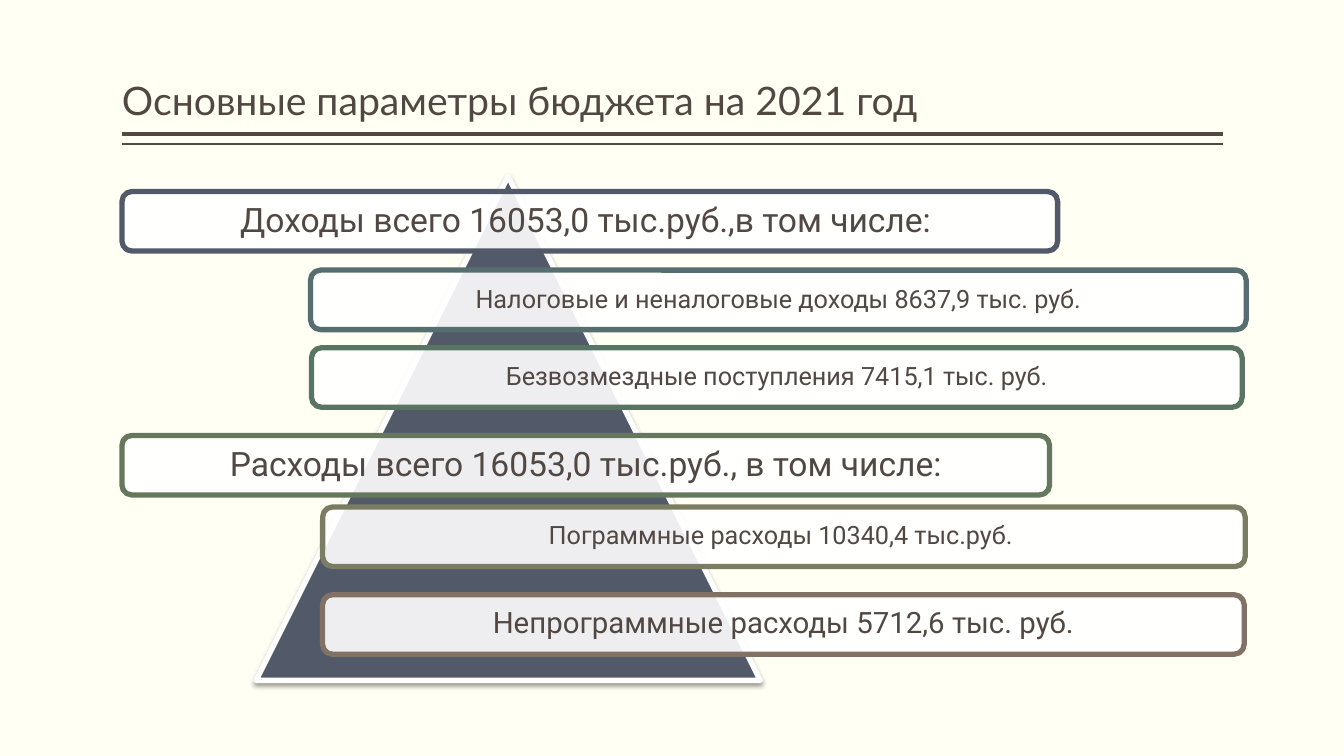
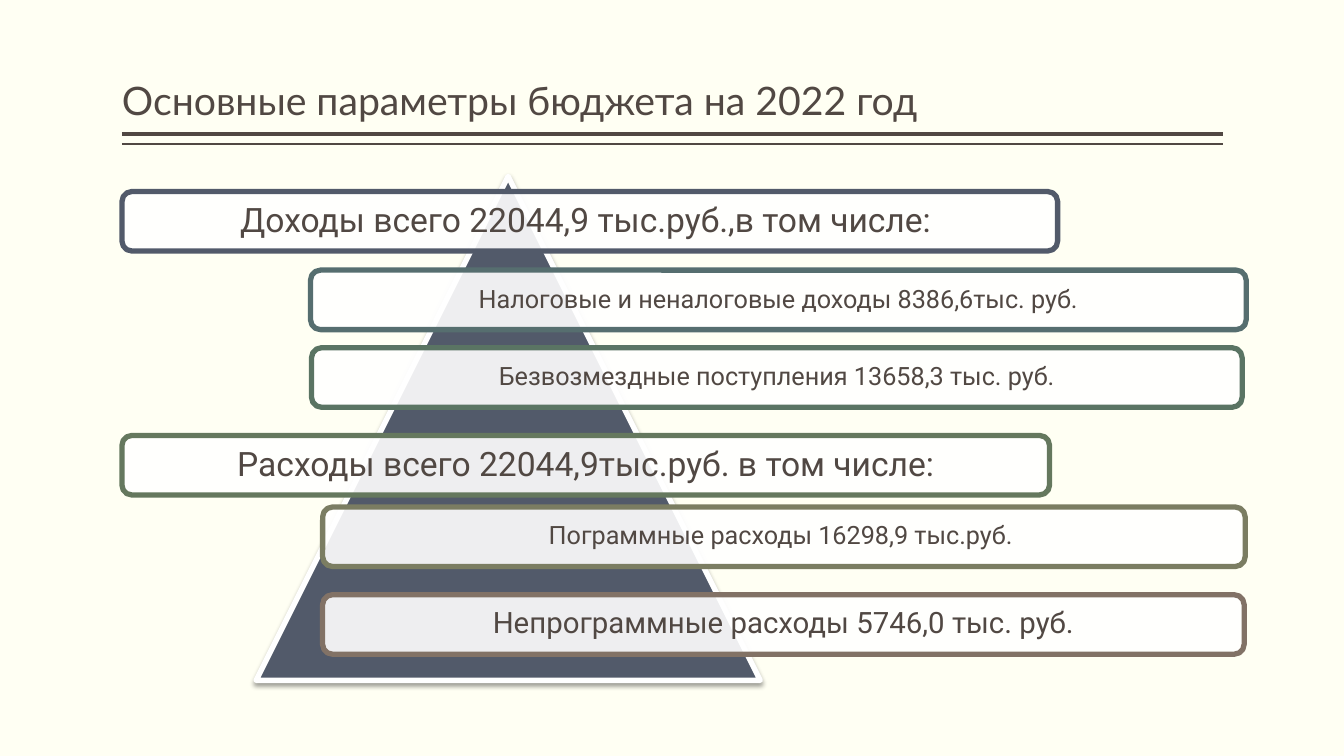
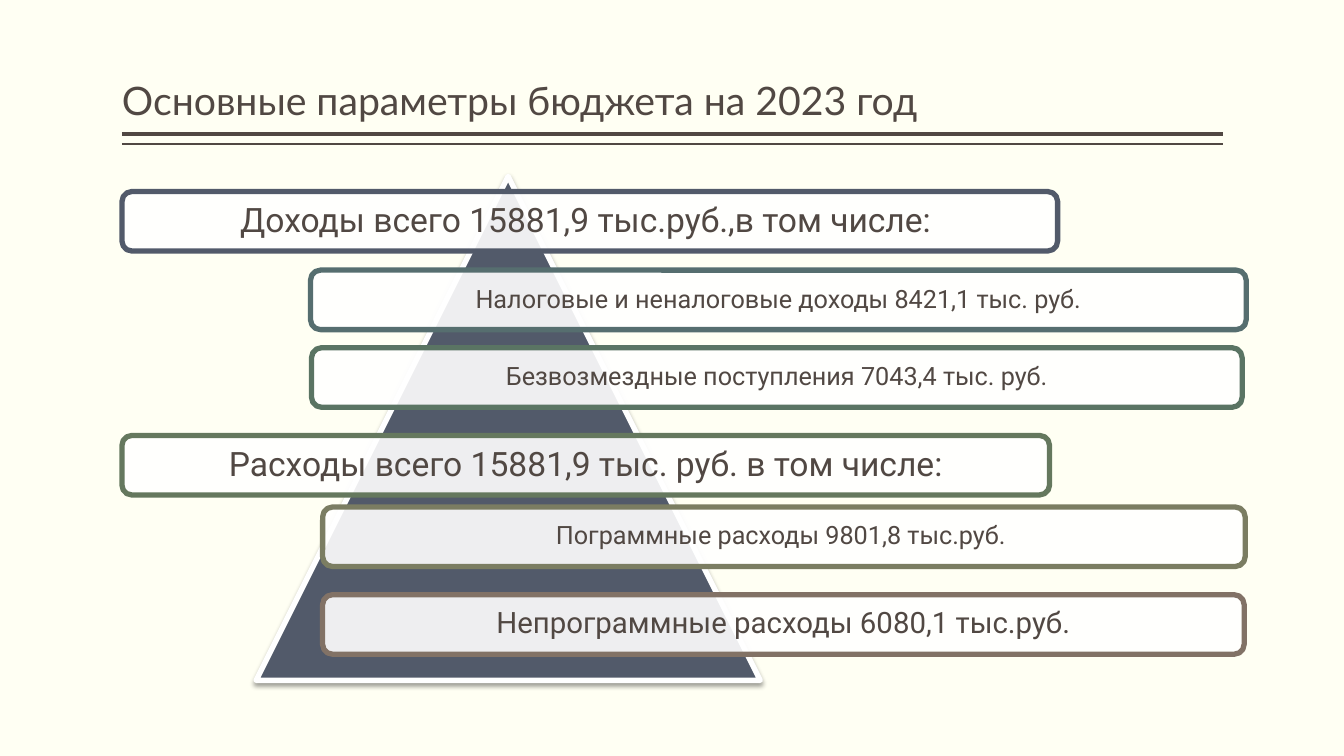
from lxml import etree
from pptx import Presentation
from pptx import util as u
from pptx.dml.color import RGBColor
from pptx.enum import shapes, text
from pptx.oxml.ns import qn

INK = RGBColor(0x51, 0x48, 0x43)
CREAM = RGBColor(0xFF, 0xFF, 0xF3)
WHITE = RGBColor(0xFF, 0xFF, 0xFF)
SLATE = RGBColor(0x52, 0x5A, 0x6A)
TEAL = RGBColor(0x56, 0x6E, 0x6F)
GREEN = RGBColor(0x5A, 0x74, 0x63)
MOSS = RGBColor(0x65, 0x78, 0x5E)
OLIVE = RGBColor(0x7B, 0x7D, 0x62)
BROWN = RGBColor(0x82, 0x72, 0x66)

TITLE_FONT, BODY_FONT = "Lato", "Roboto"
SLIDE_W, SLIDE_H = 13.33, 7.5
MARGIN = 1.21
CONTENT_W = 10.92
RULES = [(1.33, 3), (1.43, 1)]
PYRAMID = (2.54, 1.75, 5, 5)
BAR_H = 0.59

BARS = [
    (MARGIN, 1.9, 9.28, SLATE, 24),
    (3.08, 2.68, 9.28, TEAL, 18),
    (3.09, 3.45, 9.23, GREEN, 18),
    (MARGIN, 4.32, 9.2, MOSS, 24),
    (3.2, 5.03, 9.15, OLIVE, 18),
    (3.2, 5.9, 9.14, BROWN, 21),
]

BUDGETS = {
    2021: [
        "Доходы всего 16053,0 тыс.руб.,в том числе: ",
        "Налоговые и неналоговые доходы 8637,9 тыс. руб.",
        "Безвозмездные поступления 7415,1 тыс. руб.",
        "Расходы всего 16053,0 тыс.руб., в том числе:",
        "Пограммные расходы 10340,4 тыс.руб. ",
        "Непрограммные расходы 5712,6 тыс. руб.",
    ],
    2022: [
        "Доходы всего 22044,9 тыс.руб.,в том числе: ",
        "Налоговые и неналоговые доходы 8386,6тыс. руб.",
        "Безвозмездные поступления 13658,3 тыс. руб.",
        "Расходы всего 22044,9тыс.руб. в том числе:",
        "Пограммные расходы 16298,9 тыс.руб. ",
        "Непрограммные расходы 5746,0 тыс. руб.",
    ],
    2023: [
        "Доходы всего 15881,9 тыс.руб.,в том числе: ",
        "Налоговые и неналоговые доходы 8421,1 тыс. руб.",
        "Безвозмездные поступления 7043,4 тыс. руб.",
        "Расходы всего 15881,9 тыс. руб. в том числе:",
        "Пограммные расходы 9801,8 тыс.руб. ",
        "Непрограммные расходы 6080,1 тыс.руб.",
    ],
}


def inches(*values):
    return [u.Inches(v) for v in values]


def write(sp, words, font, size, align, anchor, inset_x, inset_y):
    tf = sp.text_frame
    tf.text = words
    tf.word_wrap = True
    tf.vertical_anchor = anchor
    tf.margin_left = tf.margin_right = u.Inches(inset_x)
    tf.margin_top = tf.margin_bottom = u.Inches(inset_y)
    p = tf.paragraphs[0]
    p.alignment = align
    p.line_spacing = 0.9
    r = p.runs[0]
    r.font.name, r.font.size, r.font.color.rgb = font, u.Pt(size), INK


def add_box(s, kind, place, fill, line, width):
    sp = s.shapes.add_shape(kind, *inches(*place))
    sp.shadow.inherit = False
    sp.fill.solid()
    sp.fill.fore_color.rgb = fill
    sp.line.color.rgb = line
    sp.line.width = u.Pt(width)
    return sp


def set_alpha(color, percent):
    etree.SubElement(color, qn("a:alpha"), val=str(percent * 1000))


def add_heading(s, words):
    for y, width in RULES:
        rule = s.shapes.add_connector(
            shapes.MSO_CONNECTOR.STRAIGHT, *inches(MARGIN, y, MARGIN + CONTENT_W, y))
        rule.line.color.rgb = INK
        rule.line.width = u.Pt(width)
        etree.SubElement(rule._element.spPr, qn("a:effectLst"))
    title = s.shapes.add_textbox(*inches(MARGIN, 0.08, CONTENT_W, 1.2))
    write(title, words, TITLE_FONT, 28, text.PP_ALIGN.LEFT, text.MSO_ANCHOR.BOTTOM, 0, 0.05)


def add_pyramid(s):
    sp = add_box(s, shapes.MSO_SHAPE.ISOSCELES_TRIANGLE, PYRAMID, SLATE, WHITE, 3.82)
    effects = sp._element.spPr.find(qn("a:effectLst"))
    shadow = etree.SubElement(
        effects, qn("a:outerShdw"), blurRad=str(u.Pt(3.5)), dist=str(u.Pt(2)),
        dir=str(90 * 60000), algn="ctr", rotWithShape="0")
    set_alpha(etree.SubElement(shadow, qn("a:srgbClr"), val="000000"), 38)


def add_bar(s, words, left, top, width, color, size):
    sp = add_box(s, shapes.MSO_SHAPE.ROUNDED_RECTANGLE, (left, top, width, BAR_H),
                 WHITE, color, 3.78)
    set_alpha(sp._element.spPr.find(qn("a:solidFill"))[0], 90)
    inset = size / 240
    write(sp, words, BODY_FONT, size, text.PP_ALIGN.CENTER, text.MSO_ANCHOR.MIDDLE, inset, inset)


def main():
    prs = Presentation()
    prs.slide_width, prs.slide_height = inches(SLIDE_W, SLIDE_H)
    background = prs.slide_master.background.fill
    background.solid()
    background.fore_color.rgb = CREAM
    for year, lines in BUDGETS.items():
        s = prs.slides.add_slide(prs.slide_layouts[6])
        add_heading(s, f"Основные параметры бюджета на {year} год")
        add_pyramid(s)
        for words, bar in zip(lines, BARS):
            add_bar(s, words, *bar)
    prs.save("out.pptx")


if __name__ == "__main__":
    main()
